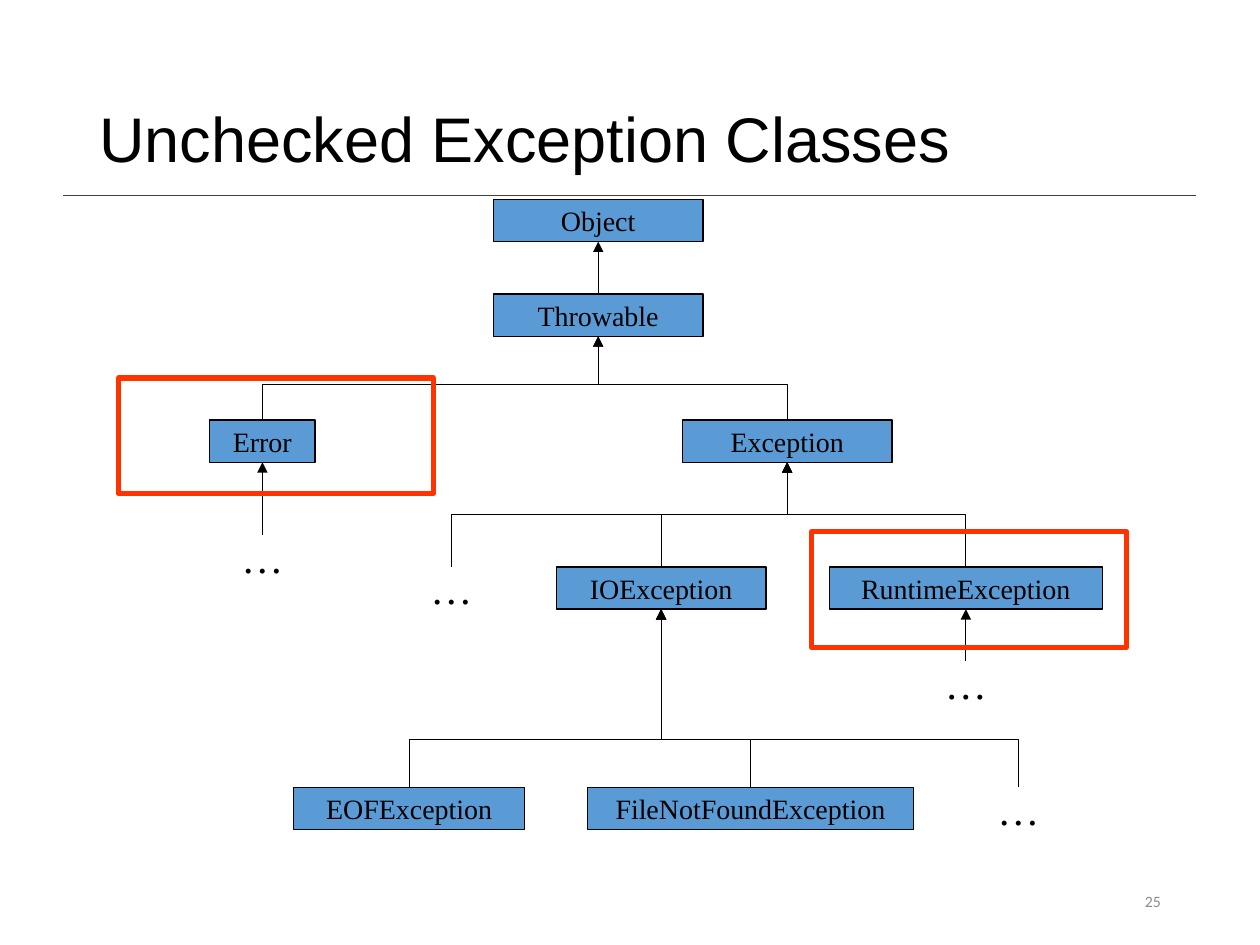
from dataclasses import dataclass
from typing import NamedTuple

from lxml import etree
from pptx import Presentation
from pptx.dml.color import RGBColor
from pptx.enum.shapes import MSO_CONNECTOR, MSO_SHAPE
from pptx.enum.text import MSO_ANCHOR, PP_ALIGN
from pptx.oxml.ns import qn
from pptx.util import Cm, Pt

STRAIGHT, ELBOW = MSO_CONNECTOR.STRAIGHT, MSO_CONNECTOR.ELBOW
RECTANGLE = MSO_SHAPE.RECTANGLE
MIDDLE = MSO_ANCHOR.MIDDLE
LEFT, CENTER, RIGHT = PP_ALIGN.LEFT, PP_ALIGN.CENTER, PP_ALIGN.RIGHT
TOP_SITE, BOTTOM_SITE = 0, 2


@dataclass(frozen=True)
class Theme:
    """Colours, fonts and sizes of the slide."""
    ink: RGBColor = RGBColor(0x00, 0x00, 0x00)
    rule: RGBColor = RGBColor(0x40, 0x40, 0x40)
    muted: RGBColor = RGBColor(0x8C, 0x8C, 0x8C)
    node: RGBColor = RGBColor(0x5B, 0x9B, 0xD5)
    highlight: RGBColor = RGBColor(0xFF, 0x33, 0x00)
    title_font: str = "Arial"
    node_font: str = "Times New Roman"
    number_font: str = "Calibri"
    title_size: Pt = Pt(36)
    ellipsis_size: Pt = Pt(24)
    node_size: Pt = Pt(16)
    number_size: Pt = Pt(9)
    thin: Pt = Pt(0.75)
    rule_width: Pt = Pt(1)
    thick: Pt = Pt(3)


class Box(NamedTuple):
    """A region in centimetres."""
    left: float
    top: float
    width: float
    height: float

    def inner(self, left, top, width, height):
        """Return a box placed relative to this one."""
        return Box(self.left + left, self.top + top, width, height)

    def lengths(self):
        """Return the four sides as slide lengths."""
        return [Cm(side) for side in self]


THEME = Theme()
ELLIPSIS = "…"
NODE_HEIGHT = 0.85
ELLIPSIS_WIDTH = 1.69
HIGHLIGHT_SIZE = (6.35, 2.33)
HIGHLIGHTS = [(12.13, 6.7), (-1.84, 3.6)]
ROWS = [0, 1.91, 4.45, 7.41, 11.85]

CLASSES = [
    ("Object", None, 7.83, ROWS[0], 4.23),
    ("Throwable", "Object", 7.83, ROWS[1], 4.23),
    ("Error", "Throwable", 1.06, ROWS[2], 2.12),
    ("Exception", "Throwable", 11.64, ROWS[2], 4.23),
    ("IOException", "Exception", 9.1, ROWS[3], 4.23),
    ("RuntimeException", "Exception", 15.24, ROWS[3], 5.5),
    ("EOFException", "IOException", 4.02, ROWS[4], 4.66),
    ("FileNotFoundException", "IOException", 10.9, ROWS[4], 6.56),
    (ELLIPSIS, "Error", 1.06, 6.77, ELLIPSIS_WIDTH),
    (ELLIPSIS, "Exception", 4.87, ROWS[3], ELLIPSIS_WIDTH),
    (ELLIPSIS, "RuntimeException", 15.24, 9.31, ELLIPSIS_WIDTH),
    (ELLIPSIS, "IOException", 16.3, ROWS[4], ELLIPSIS_WIDTH),
]
TURNS = {"Throwable": 0.43, "Exception": 0.5, "IOException": 0.27}


def write(shape, text, font, size, color, align, wrap=True):
    """Put one styled paragraph into a shape."""
    frame = shape.text_frame
    frame.word_wrap = wrap
    frame.vertical_anchor = MIDDLE
    paragraph = frame.paragraphs[0]
    paragraph.text = text
    paragraph.alignment = align
    paragraph.font.name = font
    paragraph.font.size = size
    paragraph.font.color.rgb = color
    return paragraph


def add_line(slide, kind, start, end, color, width):
    """Draw a connector without a shadow."""
    line = slide.shapes.add_connector(kind, *start, *end)
    line.line.color.rgb = color
    line.line.width = width
    etree.SubElement(line._element.spPr, qn("a:effectLst"))
    return line


def add_rectangle(slide, box, color, width):
    """Draw an unfilled rectangle with a coloured outline."""
    rectangle = slide.shapes.add_shape(RECTANGLE, *box.lengths())
    rectangle.shadow.inherit = False
    rectangle.fill.background()
    rectangle.line.color.rgb = color
    rectangle.line.width = width
    return rectangle


def add_node(slide, box, label):
    """Draw a class box, or bare dots for further subclasses."""
    if label == ELLIPSIS:
        node = slide.shapes.add_textbox(*box.lengths())
        size = THEME.ellipsis_size
    else:
        node = add_rectangle(slide, box, THEME.ink, THEME.thin)
        node.fill.solid()
        node.fill.fore_color.rgb = THEME.node
        size = THEME.node_size
    write(node, label, THEME.node_font, size, THEME.ink, CENTER, wrap=False)
    return node


def bend_upward(link, start, end, turn):
    """Turn an elbow so that it leaves and arrives vertically."""
    (start_x, start_y), (end_x, end_y) = start, end
    rise, run = start_y - end_y, abs(end_x - start_x)
    link.left = (start_x + end_x - rise) // 2
    link.top = (start_y + end_y - run) // 2
    link.width, link.height = rise, run
    from_right = start_x > end_x
    frame = link._element.spPr.find(qn("a:xfrm"))
    for flip in ("flipH", "flipV"):
        frame.attrib.pop(flip, None)
    frame.set("rot", str((90 if from_right else 270) * 60000))
    if from_right:
        frame.set("flipH", "1")
    adjustments = link._element.spPr.find(qn("a:prstGeom")).find(qn("a:avLst"))
    etree.SubElement(adjustments, qn("a:gd"), name="adj1",
                     fmla=f"val {round(turn * 100000)}")


def add_inheritance(slide, child, parent, turn):
    """Join a subclass to its superclass with an arrow."""
    start = (child.left + child.width // 2, child.top)
    end = (parent.left + parent.width // 2, parent.top + parent.height)
    aligned = abs(start[0] - end[0]) < Cm(0.05)
    link = add_line(slide, STRAIGHT if aligned else ELBOW, start, end,
                    THEME.ink, THEME.thin)
    link.begin_connect(child, TOP_SITE)
    link.end_connect(parent, BOTTOM_SITE)
    if not aligned:
        bend_upward(link, start, end, turn)
    outline = link._element.spPr.find(qn("a:ln"))
    etree.SubElement(outline, qn("a:tailEnd"), type="triangle")


def add_header(slide, box):
    """Place the title and the rule below it."""
    title = slide.shapes.add_textbox(*box.inner(0.48, 0, 21.9, 3.68).lengths())
    paragraph = write(title, "Unchecked Exception Classes", THEME.title_font,
                      THEME.title_size, THEME.ink, LEFT)
    paragraph.line_spacing = 0.9
    rule_y = Cm(box.top + box.height)
    add_line(slide, STRAIGHT, (Cm(box.left), rule_y),
             (Cm(box.left + box.width), rule_y), THEME.rule, THEME.rule_width)


def add_class_tree(slide, box):
    """Place the class hierarchy and mark its unchecked branches."""
    nodes = {}
    links = []
    for label, parent, centre, top, width in CLASSES:
        place = box.inner(centre - width / 2, top, width, NODE_HEIGHT)
        node = add_node(slide, place, label)
        nodes[label] = node
        if parent:
            links.append((node, parent))
    for child, parent in links:
        add_inheritance(slide, child, nodes[parent], TURNS.get(parent))
    for left, top in HIGHLIGHTS:
        add_rectangle(slide, box.inner(left, top, *HIGHLIGHT_SIZE),
                      THEME.highlight, THEME.thick)


def add_page_number(slide, box):
    """Place the page number."""
    number = slide.shapes.add_textbox(*box.lengths())
    write(number, "25", THEME.number_font, THEME.number_size, THEME.muted, RIGHT)


def main():
    """Build and save the slide."""
    deck = Presentation()
    deck.slide_width, deck.slide_height = Cm(25.4), Cm(19.05)
    slide = deck.slides.add_slide(deck.slide_layouts[6])
    add_header(slide, Box(1.27, 1.02, 22.83, 2.92))
    add_class_tree(slide, Box(4.23, 4.02, 18, 12.7))
    add_page_number(slide, Box(17.93, 17.65, 5.72, 1.02))
    deck.save("out.pptx")


if __name__ == "__main__":
    main()
